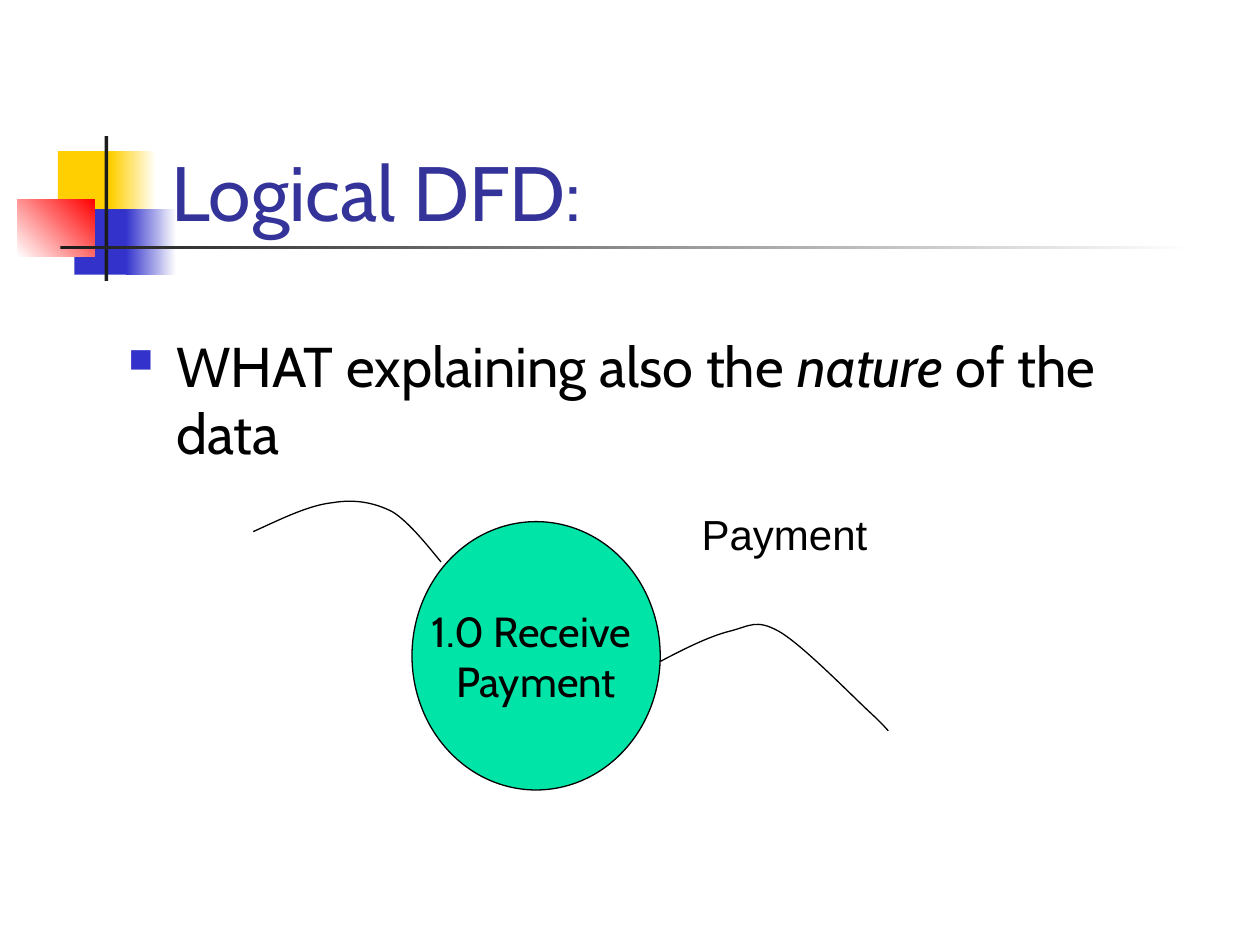
import pptx
import pptx.util
from dataclasses import dataclass
from pptx.dml.color import RGBColor
from pptx.enum.shapes import MSO_SHAPE
from pptx.enum.text import MSO_ANCHOR, PP_ALIGN
from pptx.oxml.ns import qn
from pptx.oxml.xmlchemy import OxmlElement
from pptx.util import Inches


@dataclass(frozen=True)
class Theme:
    yellow: str = "FFCF01"
    blue: str = "3333CC"
    red: str = "FF0000"
    dark: str = "1C1C1C"
    white: str = "FFFFFF"
    black: str = "000000"
    title: str = "333399"
    process: str = "00E4A8"
    font: str = "Cabin"
    label_font: str = "Arial"
    title_size: int = 44
    body_size: int = 32
    label_size: int = 24
    line: float = 0.75


T = Theme()


def rgb(value):
    return RGBColor.from_string(value)


def add_text(p, text, size=T.label_size, font=T.font, color=T.black, italic=False):
    r = p.add_run()
    r.text = text
    r.font.size = pptx.util.Pt(size)
    r.font.name = font
    r.font.color.rgb = rgb(color)
    r.font.italic = italic


def add_box(s, box, anchor=MSO_ANCHOR.TOP):
    tf = s.shapes.add_textbox(*map(Inches, box)).text_frame
    tf.word_wrap = True
    tf.vertical_anchor = anchor
    return tf


def add_block(s, box, color, end=None, angle=0):
    """Borderless rectangle, solid or fading from color to end."""
    sp = s.shapes.add_shape(MSO_SHAPE.RECTANGLE, *map(Inches, box))
    sp.shadow.inherit = False
    sp.line.fill.background()
    if end is None:
        sp.fill.solid()
        sp.fill.fore_color.rgb = rgb(color)
        return
    sp.fill.gradient()
    sp.fill.gradient_angle = angle
    for stop, value, place in zip(sp.fill.gradient_stops, (color, end), (0, 1)):
        stop.color.rgb = rgb(value)
        stop.position = place


def add_outline(sp):
    sp.shadow.inherit = False
    sp.line.color.rgb = rgb(T.black)
    sp.line.width = pptx.util.Pt(T.line)


def add_curve(s, start, controls):
    """Open Bezier curve; each three points of controls make one segment."""
    fb = s.shapes.build_freeform(*map(Inches, start), scale=1.0)
    fb.add_line_segments([tuple(map(Inches, pt)) for pt in controls], close=False)
    sp = fb.convert_to_shape()
    sp.fill.background()
    add_outline(sp)
    lines = list(sp.element.iter(qn("a:lnTo")))
    for i in range(0, len(lines), 3):
        bezier = OxmlElement("a:cubicBezTo")
        lines[i].addprevious(bezier)
        for line in lines[i:i + 3]:
            bezier.append(line[0])
            line.getparent().remove(line)


def add_ornament(s, x, y):
    add_block(s, (x + 0.32, y + 0.12, 0.48, 0.52), T.yellow)
    add_block(s, (x + 0.74, y + 0.12, 0.36, 0.52), T.yellow, T.white)
    add_block(s, (x + 0.45, y + 0.58, 0.46, 0.52), T.blue)
    add_block(s, (x + 0.86, y + 0.58, 0.4, 0.52), T.blue, T.white)
    add_block(s, (x, y + 0.5, 0.61, 0.46), T.white, T.red, angle=45)
    add_block(s, (x + 0.69, y, 0.03, 1.15), T.dark)
    add_block(s, (x + 0.34, y + 0.87, 9, 0.03), T.dark, T.white)


def add_title(s, box):
    tf = add_box(s, box, MSO_ANCHOR.BOTTOM)
    add_text(tf.paragraphs[0], "Logical DFD:", size=T.title_size, color=T.title)


def add_body(s, box):
    p = add_box(s, box).paragraphs[0]
    for text, italic in (("WHAT explaining also the ", False), ("nature ", True),
                         ("of the data", False)):
        add_text(p, text, size=T.body_size, italic=italic)
    pPr = p._p.get_or_add_pPr()
    pPr.set("marL", str(Inches(0.38)))
    pPr.set("indent", str(Inches(-0.38)))
    color = OxmlElement("a:buClr")
    value = OxmlElement("a:srgbClr")
    value.set("val", T.blue)
    color.append(value)
    size = OxmlElement("a:buSzPct")
    size.set("val", "60000")
    char = OxmlElement("a:buChar")
    char.set("char", "■")
    pPr.extend([color, size, char])


def add_process(s, box):
    sp = s.shapes.add_shape(MSO_SHAPE.OVAL, *map(Inches, box))
    sp.fill.solid()
    sp.fill.fore_color.rgb = rgb(T.process)
    add_outline(sp)
    tf = sp.text_frame
    tf.word_wrap = False
    tf.vertical_anchor = MSO_ANCHOR.MIDDLE
    for i, text in enumerate(("1.0 Receive ", "Payment")):
        p = tf.add_paragraph() if i else tf.paragraphs[0]
        p.alignment = PP_ALIGN.CENTER
        add_text(p, text)


def add_flows(s, label_box):
    add_curve(s, (2.01, 4.22), [
        (2.23, 4.12), (2.45, 4.01), (2.64, 3.99),
        (2.82, 3.96), (2.97, 3.99), (3.11, 4.06),
        (3.25, 4.14), (3.44, 4.39), (3.5, 4.46)])
    add_curve(s, (5.24, 5.25), [
        (5.43, 5.15), (5.63, 5.05), (5.79, 5.01),
        (5.95, 4.97), (6, 4.91), (6.18, 5.01),
        (6.36, 5.11), (6.75, 5.51), (6.89, 5.64),
        (7.03, 5.77), (7.02, 5.77), (7.05, 5.8)])
    add_text(add_box(s, label_box).paragraphs[0], "Payment", font=T.label_font)


def main():
    prs = pptx.Presentation()
    prs.slide_width, prs.slide_height = Inches(10), Inches(7.5)
    s = prs.slides.add_slide(prs.slide_layouts[6])
    add_ornament(s, 0.14, 1.08)
    add_title(s, (1.26, 0.68, 8.52, 1.25))
    add_body(s, (0.92, 2.58, 8.57, 4.55))
    add_process(s, (3.27, 4.14, 1.97, 2.13))
    add_flows(s, (5.47, 3.99, 2.13, 0.4))
    prs.save("out.pptx")


if __name__ == "__main__":
    main()
